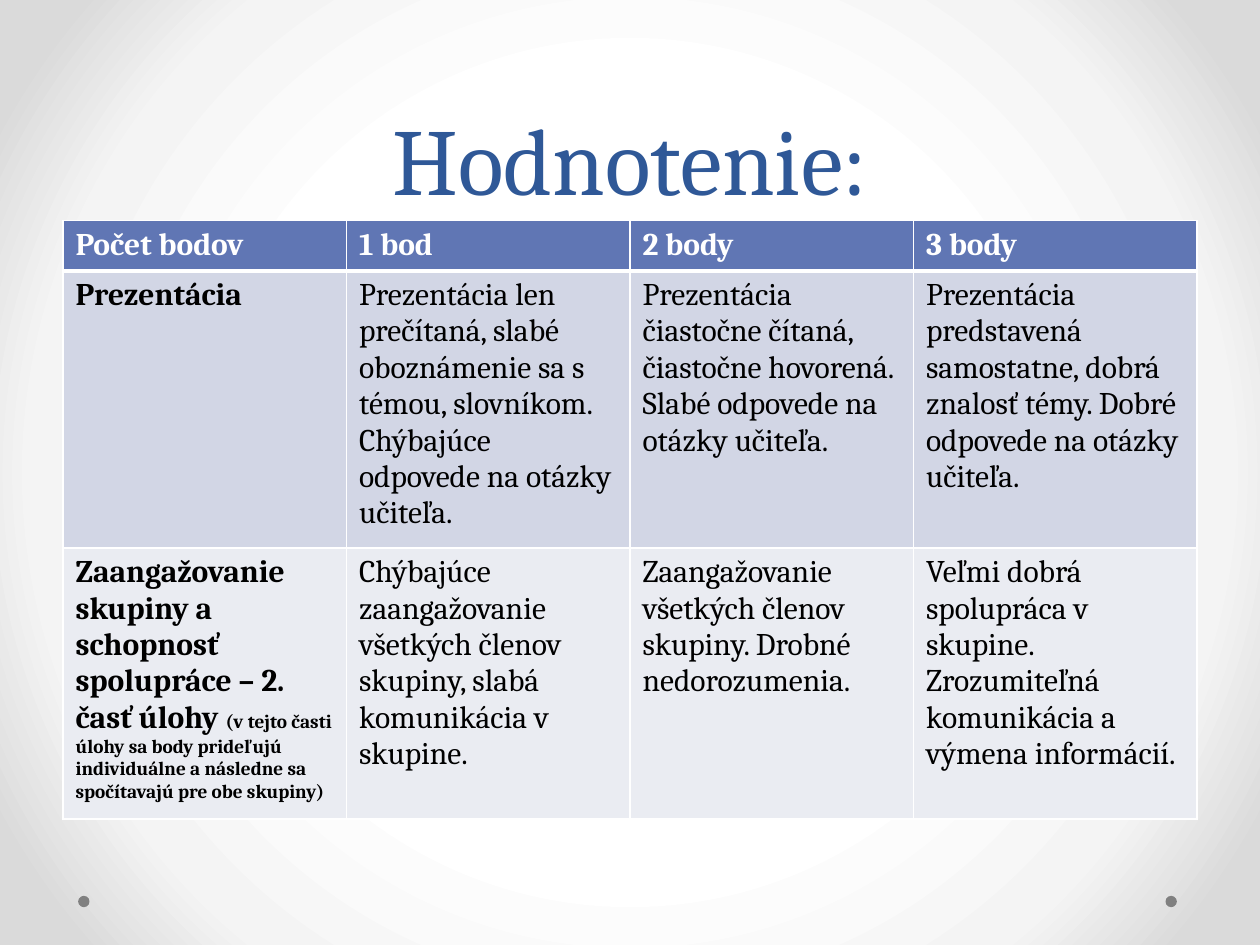
"""Build the grading table slide."""
from pptx import Presentation
from pptx.dml.color import RGBColor
from pptx.enum.shapes import MSO_SHAPE
from pptx.enum.text import MSO_ANCHOR, PP_ALIGN
from pptx.oxml import parse_xml
from pptx.oxml.ns import nsdecls, qn
from pptx.util import Inches, Pt

COLORS = {
    "title": "2F5897",
    "header": "6076B4",
    "band_dark": "D2D6E5",
    "band_light": "EAECF2",
    "white": "FFFFFF",
    "black": "000000",
    "dot": "808080",
}
BACKGROUND_STOPS = [(50, "FFFFFF"), (76, "F4F4F4"), (92, "DADADA")]
ROWS = [
    ("header", 0.4, ["Počet bodov", "1 bod", "2 body", "3 body"]),
    ("band_dark", 2.12, [
        "Prezentácia",
        "Prezentácia len prečítaná, slabé oboznámenie sa s témou, slovníkom. "
        "Chýbajúce odpovede na otázky učiteľa.",
        "Prezentácia čiastočne čítaná, čiastočne hovorená. "
        "Slabé odpovede na otázky učiteľa.",
        "Prezentácia predstavená samostatne, dobrá znalosť témy. "
        "Dobré odpovede na otázky učiteľa.",
    ]),
    ("band_light", 2.07, [
        "Zaangažovanie skupiny a schopnosť spolupráce – 2. časť úlohy ",
        "Chýbajúce zaangažovanie všetkých členov skupiny, slabá komunikácia v skupine.",
        "Zaangažovanie všetkých členov skupiny. Drobné nedorozumenia.",
        "Veľmi dobrá spolupráca v skupine. "
        "Zrozumiteľná komunikácia a výmena informácií.",
    ]),
]
SCORING_NOTE = (
    "(v tejto časti úlohy sa body prideľujú individuálne "
    "a následne sa spočítavajú pre obe skupiny)"
)


def format_run(run, size, color, bold=False):
    run.font.name = "Cambria"
    run.font.size = Pt(size)
    run.font.bold = bold
    run.font.color.rgb = RGBColor.from_string(COLORS[color])


def set_borders(cell, bottom_width):
    properties = cell._tc.get_or_add_tcPr()
    widths = {"lnL": 1, "lnR": 1, "lnT": 1, "lnB": bottom_width}
    for index, (side, width) in enumerate(widths.items()):
        properties.insert(index, parse_xml(
            f'<a:{side} {nsdecls("a")} w="{Pt(width)}"><a:solidFill>'
            f'<a:srgbClr val="{COLORS["white"]}"/></a:solidFill></a:{side}>'
        ))


presentation = Presentation()
presentation.slide_width = Inches(10)
presentation.slide_height = Inches(7.5)
slide = presentation.slides.add_slide(presentation.slide_layouts[6])

slide.background.fill.gradient()
gradient = slide.element.find(".//" + qn("a:gradFill"))
stops = "".join(
    f'<a:gs pos="{position * 1000}"><a:srgbClr val="{color}"/></a:gs>'
    for position, color in BACKGROUND_STOPS
)
gradient.getparent().replace(gradient, parse_xml(
    f'<a:gradFill {nsdecls("a")} rotWithShape="1"><a:gsLst>{stops}</a:gsLst>'
    '<a:path path="circle"><a:fillToRect l="50000" t="50000" r="50000" b="50000"/>'
    '</a:path></a:gradFill>'
))

for left in (9.25, 0.62):
    dot = slide.shapes.add_shape(
        MSO_SHAPE.OVAL, Inches(left), Inches(7.11), Inches(0.09), Inches(0.09)
    )
    dot.shadow.inherit = False
    dot.fill.solid()
    dot.fill.fore_color.rgb = RGBColor.from_string(COLORS["dot"])
    dot.line.fill.background()

title = slide.shapes.add_textbox(Inches(0.5), Inches(0), Inches(9), Inches(1.75))
title.text_frame.word_wrap = True
title.text_frame.vertical_anchor = MSO_ANCHOR.BOTTOM
title.text_frame.text = "Hodnotenie:"
paragraph = title.text_frame.paragraphs[0]
paragraph.alignment = PP_ALIGN.CENTER
paragraph.line_spacing = Pt(58)
format_run(paragraph.runs[0], 54, "title")

table = slide.shapes.add_table(
    len(ROWS), 4, Inches(0.5), Inches(1.75), Inches(9),
    Inches(sum(height for _, height, _ in ROWS)),
).table
for row_index, (fill, height, texts) in enumerate(ROWS):
    is_header = fill == "header"
    table.rows[row_index].height = Inches(height)
    for column_index, text in enumerate(texts):
        cell = table.cell(row_index, column_index)
        cell.fill.solid()
        cell.fill.fore_color.rgb = RGBColor.from_string(COLORS[fill])
        set_borders(cell, 3 if is_header else 1)
        cell.text_frame.text = text
        format_run(
            cell.text_frame.paragraphs[0].runs[0], 18,
            "white" if is_header else "black",
            bold=is_header or column_index == 0,
        )

note = table.cell(2, 0).text_frame.paragraphs[0].add_run()
note.text = SCORING_NOTE
format_run(note, 11, "black", bold=True)

presentation.save("out.pptx")
